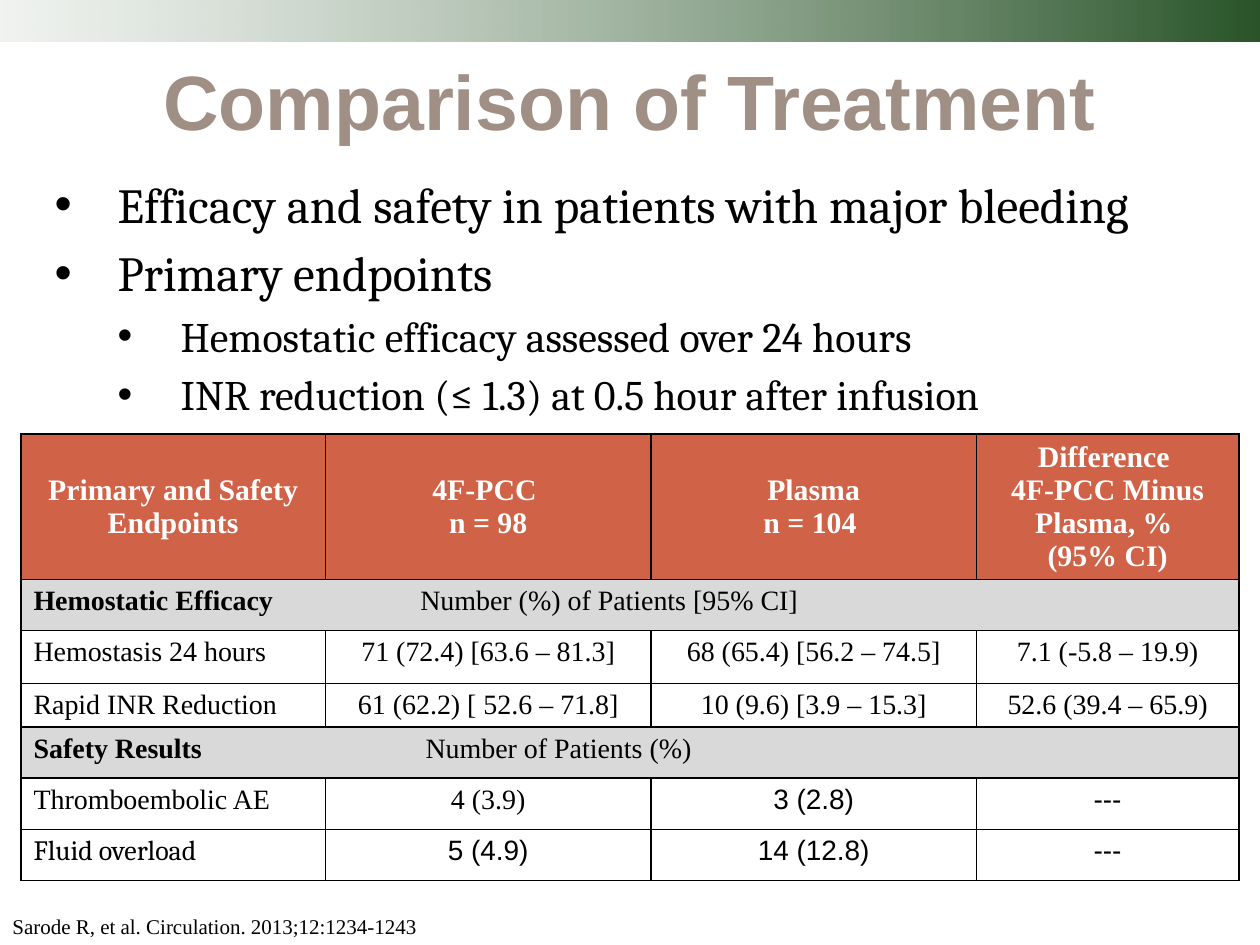
from dataclasses import dataclass
from lxml.etree import SubElement as Sub
from pptx import Presentation as Deck
from pptx.dml.color import RGBColor as Rgb
from pptx.enum.shapes import MSO_SHAPE as Kind
from pptx.enum.text import MSO_ANCHOR as Anchor, MSO_AUTO_SIZE as Fit, PP_ALIGN as Align
from pptx.oxml.ns import qn
from pptx.util import Pt


@dataclass(frozen=True)
class Theme:
    """Colours, fonts and type sizes of the slide."""
    ink: str = "000000"
    white: str = "FFFFFF"
    title: str = "A08F85"
    head: str = "D06248"
    band: str = "D9D9D9"
    fade: tuple = (("668566", 10), ("003300", 84))
    sans: str = "Arial"
    serif: str = "Cambria"
    roman: str = "Times New Roman"
    big: int = 44
    list: tuple = (28, 24)
    top: int = 17
    cell: int = 16
    note: int = 12


T = Theme()
POINTS = (
    (0, "Efficacy and safety in patients with major bleeding"),
    (0, "Primary endpoints"),
    (1, "Hemostatic efficacy assessed over 24 hours"),
    (1, "INR reduction (≤ 1.3) at 0.5 hour after infusion"),
)
HEADS = ("Primary and Safety Endpoints", "4F-PCC \nn = 98", "Plasma\nn = 104 ",
         "Difference \n4F-PCC Minus Plasma, % \n(95% CI)")
ROWS = (
    ("Hemostatic Efficacy", "Number (%) of Patients [95% CI]", 221),
    ("Hemostasis 24 hours", "71 (72.4) [63.6 – 81.3]", "68 (65.4) [56.2 – 74.5]",
     "7.1 (-5.8 – 19.9)"),
    ("Rapid INR Reduction", "61 (62.2) [ 52.6 – 71.8]", "10 (9.6) [3.9 – 15.3]",
     "52.6 (39.4 – 65.9)"),
    ("Safety Results", "Number of Patients (%)", 224),
    ("Thromboembolic AE", "4 (3.9)", "3 (2.8)", "---"),
    ("Fluid overload", "5 (4.9)", "14 (12.8)", "---"),
)
FACES = {(5, 2): T.sans, (5, 3): T.sans, (6, 0): T.serif,
         (6, 1): T.sans, (6, 2): T.sans, (6, 3): T.sans}
WIDTHS = (174, 186, 186, 150)
HEIGHTS = (83, 29.2, 30.2, 24.8, 29.2, 29.2, 29.2)


def put(item, **form):
    """Set each named value on an item."""
    for name, value in form.items():
        setattr(item, name, value)


def style(font, face, size, tint, bold=False):
    """Format a font."""
    put(font, name=face, size=Pt(size), bold=bold)
    font.color.rgb = Rgb.from_string(tint)


def place(shape, box):
    """Move a shape to a box in points."""
    put(shape, **dict(zip(("left", "top", "width", "height"), map(Pt, box))))


def title(slide, box):
    """Fill the title placeholder."""
    shape = slide.shapes.title
    place(shape, box)
    frame = shape.text_frame
    put(frame, text="Comparison of Treatment", vertical_anchor=Anchor.MIDDLE,
        auto_size=Fit.NONE, word_wrap=True)
    para = frame.paragraphs[0]
    para.alignment = Align.CENTER
    style(para.runs[0].font, T.sans, T.big, T.title, True)


def points(slide, box):
    """Fill the body placeholder with the bullet list."""
    shape = slide.placeholders[1]
    place(shape, box)
    frame = shape.text_frame
    put(frame, text="\n".join(text for _, text in POINTS), auto_size=Fit.NONE,
        word_wrap=True, vertical_anchor=Anchor.TOP)
    for i, (para, (level, _)) in enumerate(zip(frame.paragraphs, POINTS)):
        size = T.list[level]
        put(para, level=level, space_before=Pt(size * 0.2 if i else 0))
        form = para._p.get_or_add_pPr()
        form.set("marL", str(Pt(36 * (level + 1))))
        form.set("indent", str(Pt(-36)))
        Sub(form, qn("a:buFont"), typeface=T.sans)
        Sub(form, qn("a:buChar"), char="•")
        style(para.runs[0].font, T.serif, size, T.ink)


def bar(slide, box):
    """Draw the fading band."""
    shape = slide.shapes.add_shape(Kind.RECTANGLE, *map(Pt, box))
    shape.shadow.inherit = False
    shape.line.fill.background()
    shape.fill.gradient()
    shape.fill.gradient_angle = 0
    for stop, (tint, _) in zip(shape.fill.gradient_stops, T.fade):
        stop.color.rgb = Rgb.from_string(tint)
    for node, (_, alpha) in zip(shape.element.spPr.iter(qn("a:srgbClr")), T.fade):
        Sub(node, qn("a:alpha"), val=str(alpha * 1000))


def paint(cell, tint):
    """Give a cell its borders and fill."""
    form = cell._tc.get_or_add_tcPr()
    for side in "LRTB":
        line = Sub(form, qn(f"a:ln{side}"), w=str(Pt(1)))
        Sub(Sub(line, qn("a:solidFill")), qn("a:srgbClr"), val=T.ink)
    cell.fill.solid()
    cell.fill.fore_color.rgb = Rgb.from_string(tint)


def write(cell, text, face, size, tint, bold=False, align=Align.CENTER):
    """Write formatted lines in a cell."""
    cell.text_frame.text = text
    for para in cell.text_frame.paragraphs:
        para.alignment = align
        style(para.runs[0].font, face, size, tint, bold)


def section(grid, row, name, unit, stop):
    """Merge a row and write its name and unit at a tab stop."""
    cell = grid.cell(row, 0)
    cell.merge(grid.cell(row, len(WIDTHS) - 1))
    para = cell.text_frame.paragraphs[0]
    tabs = Sub(para._p.get_or_add_pPr(), qn("a:tabLst"))
    Sub(tabs, qn("a:tab"), pos=str(Pt(stop)), algn="l")
    for text, bold in ((name, True), ("\t" + unit, False)):
        run = para.add_run()
        run.text = text
        style(run.font, T.roman, T.cell, T.ink, bold)


def results(slide, box):
    """Build the table of endpoints."""
    grid = slide.shapes.add_table(len(HEIGHTS), len(WIDTHS), *map(Pt, box)).table
    put(grid, first_row=False, horz_banding=False)
    for col, width in zip(grid.columns, WIDTHS):
        col.width = Pt(width)
    for row, height in zip(grid.rows, HEIGHTS):
        row.height = Pt(height)
    for c, text in enumerate(HEADS):
        cell = grid.cell(0, c)
        paint(cell, T.head)
        cell.vertical_anchor = Anchor.MIDDLE
        write(cell, text, T.roman, T.top, T.white, True)
    for r, data in enumerate(ROWS, 1):
        band = len(data) == 3
        for c in range(len(WIDTHS)):
            paint(grid.cell(r, c), T.band if band else T.white)
        if band:
            section(grid, r, *data)
            continue
        for c, text in enumerate(data):
            write(grid.cell(r, c), text, FACES.get((r, c), T.roman), T.cell, T.ink,
                  align=Align.CENTER if c else Align.LEFT)


def source(slide, box):
    """Write the citation."""
    frame = slide.shapes.add_textbox(*map(Pt, box)).text_frame
    put(frame, text="Sarode R, et al. Circulation. 2013;12:1234-1243",
        word_wrap=False, auto_size=Fit.SHAPE_TO_FIT_TEXT)
    style(frame.paragraphs[0].runs[0].font, T.roman, T.note, T.ink)


def main():
    """Build and save the slide."""
    deck = Deck()
    put(deck, slide_width=Pt(720), slide_height=Pt(540))
    slide = deck.slides.add_slide(deck.slide_layouts[1])
    points(slide, (24, 96, 675, 392))
    title(slide, (0, 12, 720, 90))
    bar(slide, (0, 0, 720, 24))
    results(slide, (12, 248, sum(WIDTHS), sum(HEIGHTS)))
    source(slide, (0, 518.4, 248.4, 21.6))
    deck.save("out.pptx")


if __name__ == "__main__":
    main()
